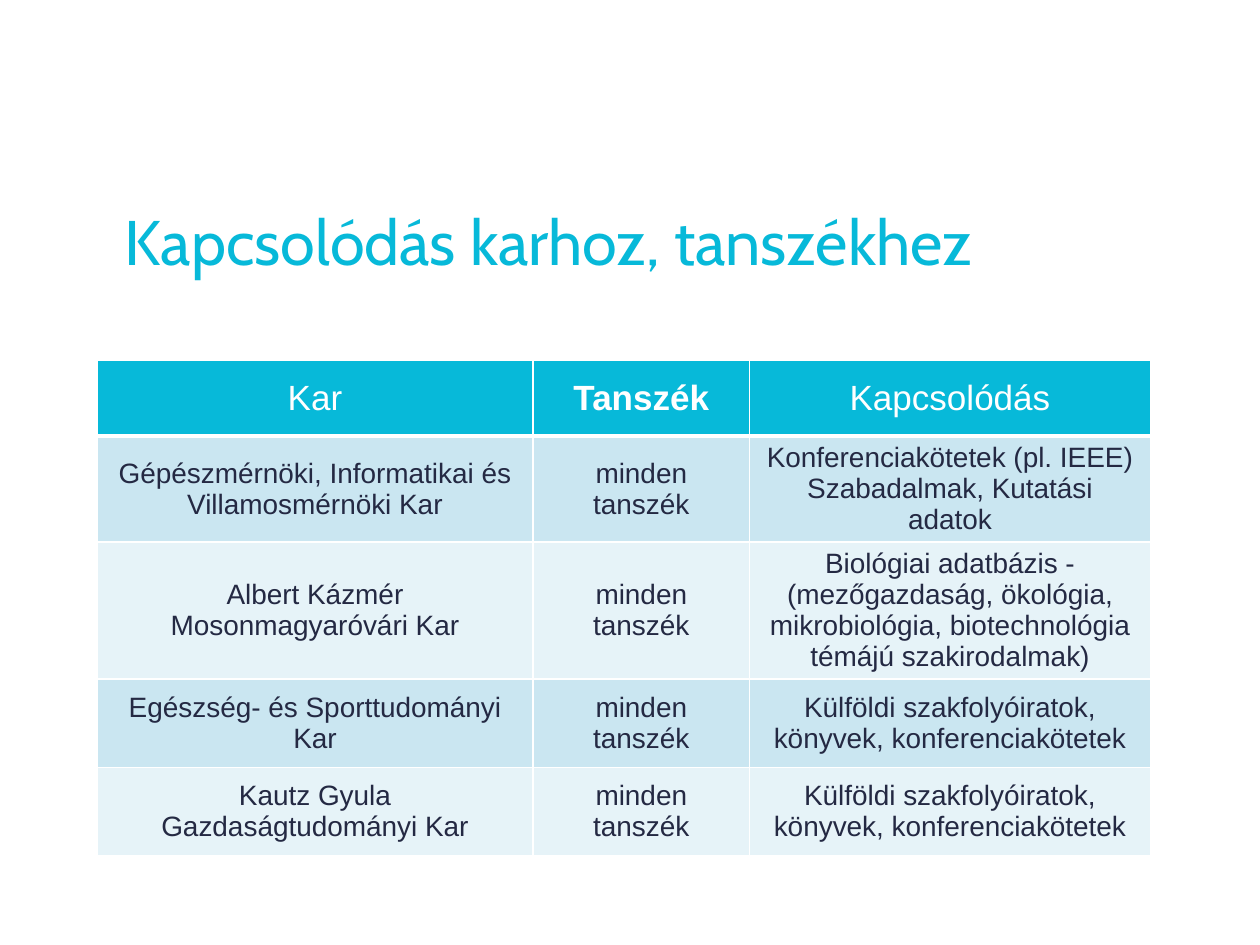
import pptx
import pptx.util
import pptx.dml.color
import pptx.enum.text
import pptx.oxml
import pptx.oxml.ns

Inches = pptx.util.Inches
HUES = {"cyan": "07B9D9", "ink": "242943", "white": "FFFFFF",
        "dark": "CAE6F1", "light": "E6F3F8"}
ALIGN = pptx.enum.text.PP_ALIGN
ANCHOR = pptx.enum.text.MSO_ANCHOR


def color(name):
    return pptx.dml.color.RGBColor.from_string(HUES[name])


def write(frame, text, size=16, font="Arial", hue="ink", bold=False,
          align=ALIGN.CENTER, space=None):
    frame.word_wrap = True
    para = frame.paragraphs[0]
    para.alignment = align
    para.line_spacing = space
    run = para.add_run()
    run.text = text
    run.font.size = pptx.util.Pt(size)
    run.font.name = font
    run.font.bold = bold
    run.font.color.rgb = color(hue)


def edge(cell, widths):
    """Draw white borders; widths holds points for L, R, T, B."""
    props = cell._tc.get_or_add_tcPr()
    for i, (side, width) in enumerate(widths.items()):
        line = pptx.oxml.parse_xml(
            f'<a:ln{side} {pptx.oxml.ns.nsdecls("a")} w="{pptx.util.Pt(width)}">'
            f'<a:solidFill><a:srgbClr val="{HUES["white"]}"/></a:solidFill>'
            f'</a:ln{side}>')
        props.insert(i, line)


class Deck:
    def __init__(self):
        self.show = pptx.Presentation()
        self.show.slide_width = Inches(10)
        self.show.slide_height = Inches(7.5)
        self.slide = self.show.slides.add_slide(self.show.slide_layouts[6])

    def title(self, text, box):
        shape = self.slide.shapes.add_textbox(*map(Inches, box))
        write(shape.text_frame, text, size=36, font="Cabin", hue="cyan",
              align=ALIGN.LEFT, space=0.9)

    def table(self, data, left, top, wides, highs):
        grid = self.slide.shapes.add_table(
            len(highs), len(wides), Inches(left), Inches(top),
            Inches(sum(wides)), Inches(sum(highs))).table
        for col, wide in zip(grid.columns, wides):
            col.width = Inches(wide)
        for r, (row, high) in enumerate(zip(data, highs)):
            grid.rows[r].height = Inches(high)
            for c, text in enumerate(row):
                self.cell(grid.cell(r, c), text, r, c)

    def cell(self, cell, text, r, c):
        head = r == 0
        cell.vertical_anchor = ANCHOR.MIDDLE
        cell.fill.solid()
        band = "dark" if r % 2 else "light"
        cell.fill.fore_color.rgb = color("cyan" if head else band)
        edge(cell, {"L": 1, "R": 1, "T": 3 if r == 1 else 1,
                    "B": 3 if head else 1})
        write(cell.text_frame, text, size=20 if head else 16,
              hue="white" if head else "ink", bold=head and c == 1)


def main():
    deck = Deck()

    # Faculties and their related sources
    unit = "minden tanszék"
    books = "Külföldi szakfolyóiratok, könyvek, konferenciakötetek"
    data = [
        ("Kar", "Tanszék", "Kapcsolódás"),
        ("Gépészmérnöki, Informatikai és Villamosmérnöki Kar", unit,
         "Konferenciakötetek (pl. IEEE) Szabadalmak, Kutatási adatok"),
        ("Albert Kázmér Mosonmagyaróvári Kar", unit,
         "Biológiai adatbázis - (mezőgazdaság, ökológia, "
         "mikrobiológia, biotechnológia témájú szakirodalmak)"),
        ("Egészség- és Sporttudományi Kar", unit, books),
        ("Kautz Gyula Gazdaságtudományi Kar", unit, books),
    ]
    deck.table(data, 0.77, 2.86, wides=(3.46, 1.72, 3.18),
               highs=(0.6, 0.84, 1.09, 0.7, 0.7))

    # Heading
    deck.title("Kapcsolódás karhoz, tanszékhez", (0.89, 1.63, 8.36, 0.6))

    deck.show.save("out.pptx")


if __name__ == "__main__":
    main()
